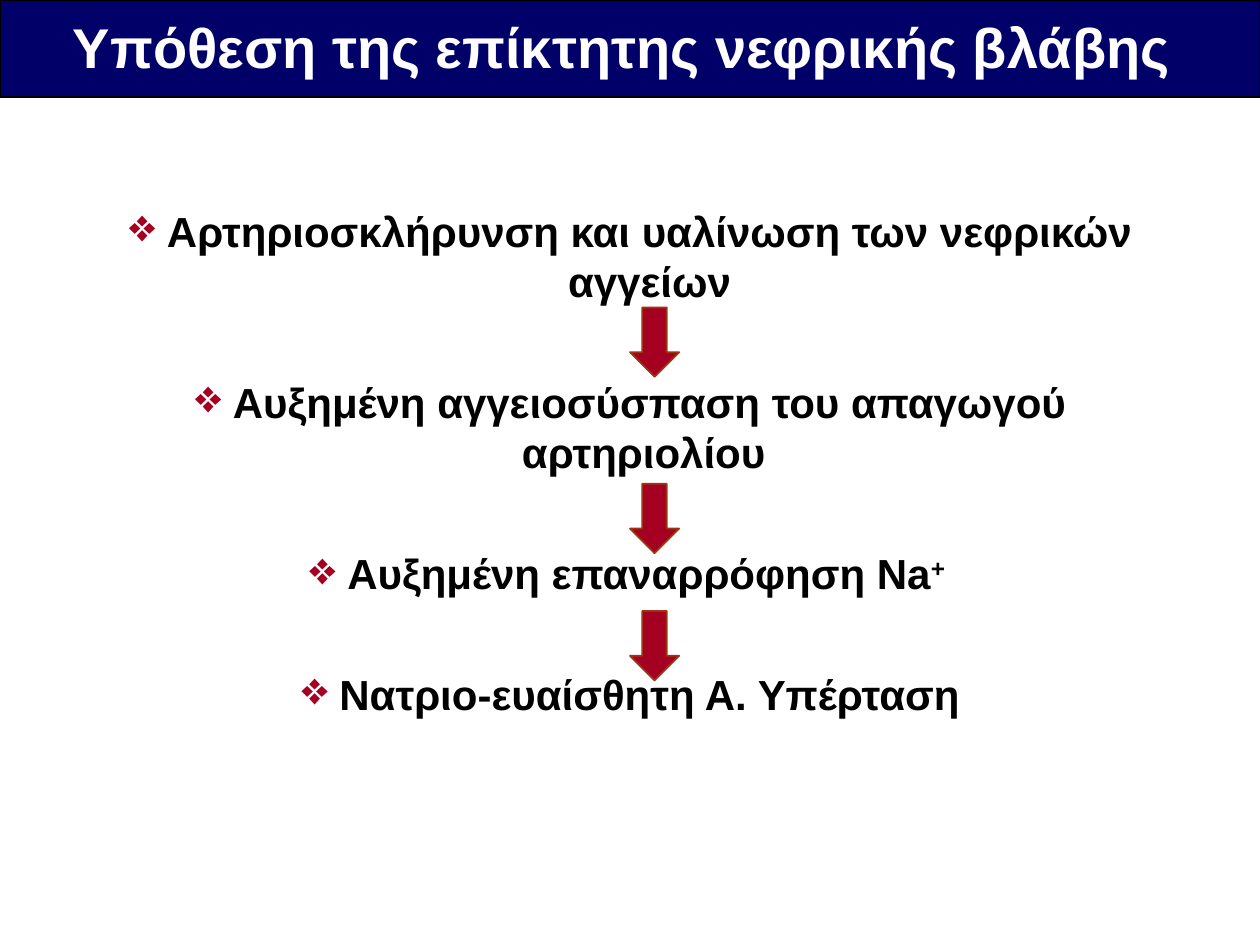
from lxml import etree
from pptx import Presentation
from pptx.dml.color import RGBColor
from pptx.enum.shapes import MSO_SHAPE
from pptx.enum.text import MSO_ANCHOR, PP_ALIGN
from pptx.oxml.ns import qn
from pptx.util import Inches, Pt

NAVY = RGBColor(0x00, 0x00, 0x68)
CRIMSON = RGBColor(0xA5, 0x00, 0x21)
RUST = RGBColor(0x9C, 0x35, 0x11)
BLACK = RGBColor(0x00, 0x00, 0x00)
WHITE = RGBColor(0xFF, 0xFF, 0xFF)

RECTANGLE = MSO_SHAPE.RECTANGLE
DOWN_ARROW = MSO_SHAPE.DOWN_ARROW
CENTER = PP_ALIGN.CENTER
TOP = MSO_ANCHOR.TOP

TITLE_ONLY = 5
SLIDE_WIDTH = 10

# Each step is its text and an optional superscript
STEPS = [
    ("Αρτηριοσκλήρυνση και υαλίνωση των νεφρικών αγγείων", ""),
    ("Αυξημένη αγγειοσύσπαση του απαγωγού αρτηριολίου ", ""),
    ("Αυξημένη επαναρρόφηση Na", "+ "),
    ("Νατριο-ευαίσθητη Α. Υπέρταση", ""),
]
ARROW_TOPS = [2.44, 3.84, 4.85]


class SlideBuilder:
    font_name = "Arial"
    title_size = Pt(32)
    step_size = Pt(24)
    step_gap = Pt(40.3)
    bullet_indent = Inches(0.3)
    bullet_percent = 110

    def __init__(self, slide):
        self.slide = slide

    def style(self, paragraph, size, color):
        paragraph.alignment = CENTER
        font = paragraph.font
        font.name, font.size, font.bold = self.font_name, size, True
        font.color.rgb = color

    def shape(self, preset, left, top, width, height, fill, line, line_width):
        shape = self.slide.shapes.add_shape(
            preset, Inches(left), Inches(top), Inches(width), Inches(height))
        shape.shadow.inherit = False
        shape.fill.solid()
        shape.fill.fore_color.rgb = fill
        shape.line.color.rgb = line
        shape.line.width = Pt(line_width)
        return shape

    def title(self, text, left, top, width, height):
        title = self.slide.shapes.title
        title.left, title.top = Inches(left), Inches(top)
        title.width, title.height = Inches(width), Inches(height)
        frame = title.text_frame
        frame.text = text
        frame.vertical_anchor = TOP
        frame.word_wrap = True
        self.style(frame.paragraphs[0], self.title_size, WHITE)
        return title

    def bullet(self, paragraph):
        properties = paragraph._p.get_or_add_pPr()
        properties.set("marL", str(self.bullet_indent))
        properties.set("indent", str(-self.bullet_indent))
        color = etree.SubElement(properties, qn("a:buClr"))
        etree.SubElement(color, qn("a:srgbClr"), val=str(CRIMSON))
        etree.SubElement(properties, qn("a:buSzPct"),
                         val=str(self.bullet_percent * 1000))
        etree.SubElement(properties, qn("a:buChar"), char="❖")

    def steps(self, steps, left, top, width, height):
        box = self.slide.shapes.add_textbox(
            Inches(left), Inches(top), Inches(width), Inches(height))
        frame = box.text_frame
        frame.word_wrap = True
        for number, (text, superscript) in enumerate(steps):
            paragraph = frame.add_paragraph() if number else frame.paragraphs[0]
            if number:
                paragraph.space_before = self.step_gap
            self.bullet(paragraph)
            self.style(paragraph, self.step_size, BLACK)
            paragraph.add_run().text = text
            if superscript:
                run = paragraph.add_run()
                run.text = superscript
                run.font._element.set("baseline", "30000")


def main():
    presentation = Presentation()
    presentation.slide_width = Inches(SLIDE_WIDTH)
    presentation.slide_height = Inches(7.5)
    slide = presentation.slides.add_slide(presentation.slide_layouts[TITLE_ONLY])
    builder = SlideBuilder(slide)

    # Title on its band, with the band behind
    band = builder.shape(RECTANGLE, 0, 0, SLIDE_WIDTH, 0.77, NAVY, BLACK, 0.75)
    title = builder.title("Υπόθεση της επίκτητης νεφρικής βλάβης ",
                          0, 0.05, SLIDE_WIDTH, 0.64)
    title.element.addprevious(band.element)

    # Chain of causes
    builder.steps(STEPS, 0.51, 1.58, 8.99, 5)

    # Arrows from each step to the next
    for top in ARROW_TOPS:
        builder.shape(DOWN_ARROW, 5, top, 0.39, 0.55, CRIMSON, RUST, 1)

    presentation.save("out.pptx")


if __name__ == "__main__":
    main()
